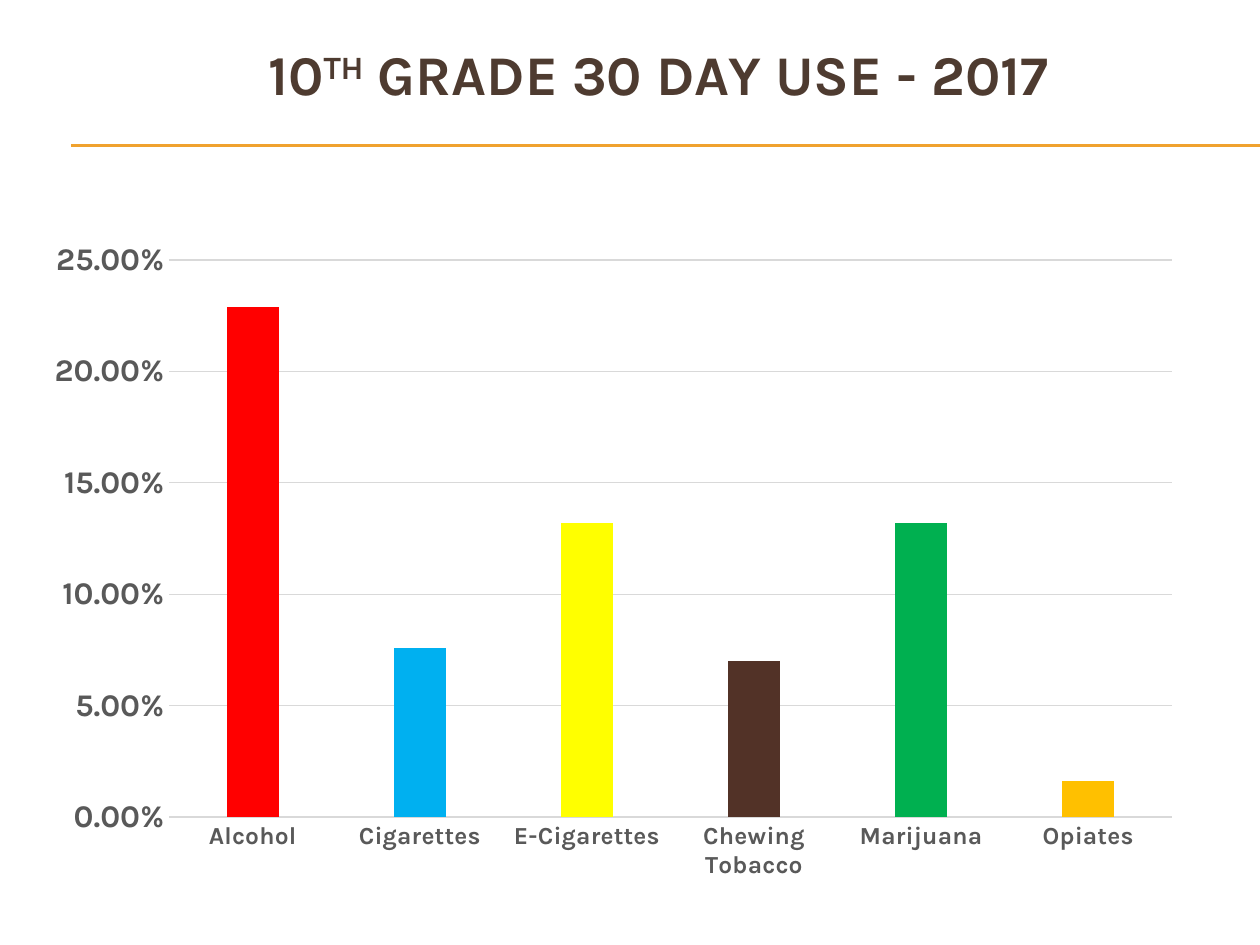
from lxml import etree
from pptx import Presentation
from pptx.chart.data import CategoryChartData
from pptx.dml.color import RGBColor as RGB
from pptx.enum.chart import XL_CHART_TYPE as Kind, XL_TICK_MARK as Tick
from pptx.enum.shapes import MSO_CONNECTOR as Link
from pptx.enum.text import MSO_ANCHOR as Anchor, MSO_AUTO_SIZE as Fit, PP_ALIGN as Align
from pptx.oxml import parse_xml
from pptx.oxml.ns import nsdecls, qn
from pptx.util import Emu, Pt

PX = 914400 / 126
FACE = "Karla"
HUES = {
    "title": "4E3B30", "rule": "F0A22E", "label": "595959", "grid": "D9D9D9",
    "Alcohol": "FF0000", "Cigarettes": "00B0F0", "E-Cigarettes": "FFFF00",
    "Chewing Tobacco": "523227", "Marijuana": "00B050", "Opiates": "FFC000",
}
RATES = {
    "Alcohol": 0.229, "Cigarettes": 0.076, "E-Cigarettes": 0.132,
    "Chewing Tobacco": 0.07, "Marijuana": 0.132, "Opiates": 0.016,
}


def box(*nums):
    return [Emu(round(n * PX)) for n in nums]


def style(font, size, hue):
    font.name = FACE
    font.size = Pt(size)
    font.bold = True
    font.color.rgb = RGB.from_string(HUES[hue])


deck = Presentation()
deck.slide_width, deck.slide_height = box(1260, 945)
slide = deck.slides.add_slide(deck.slide_layouts[5])

for y in (145, 146):
    rule = slide.shapes.add_connector(Link.STRAIGHT, *box(71, y, 1260, y))
    rule.line.color.rgb = RGB.from_string(HUES["rule"])
    rule.line.width = Pt(0.75)
    etree.SubElement(rule._element.spPr, qn("a:effectLst"))

title = slide.shapes.title
title.left, title.top, title.width, title.height = box(116, 42, 1086, 63)
frame = title.text_frame
frame.auto_size = Fit.NONE
frame.word_wrap = True
frame.vertical_anchor = Anchor.MIDDLE
para = frame.paragraphs[0]
para.alignment = Align.CENTER
for text, base in (("10", 0), ("TH", 30000), (" GRADE 30 DAY USE - 2017", 0)):
    run = para.add_run()
    run.text = text
    style(run.font, 32, "title")
    if base:
        run.font._element.set("baseline", str(base))

data = CategoryChartData(number_format="0.00%")
data.categories = list(RATES)
data.add_series("Series 1", list(RATES.values()))
chart = slide.shapes.add_chart(
    Kind.COLUMN_CLUSTERED, *box(54, 221, 1119, 683), data).chart
chart.has_legend = False
chart.has_title = False
chart.font.name = FACE
chart.font.size = Pt(10)

plot = chart.plots[0]
plot.gap_width = 219
plot.overlap = -27
plot.vary_by_categories = False
bars = plot.series[0]
bars.format.fill.solid()
bars.format.fill.fore_color.rgb = RGB.from_string(HUES["rule"])
for i, name in enumerate(RATES):
    fill = bars.points[i].format.fill
    fill.solid()
    fill.fore_color.rgb = RGB.from_string(HUES[name])

cats, vals = chart.category_axis, chart.value_axis
for axis, size in ((cats, 14), (vals, 18)):
    axis.major_tick_mark = axis.minor_tick_mark = Tick.NONE
    style(axis.tick_labels.font, size, "label")
vals.minimum_scale, vals.maximum_scale, vals.major_unit = 0, 0.25, 0.05
vals.tick_labels.number_format = "0.00%"
vals.tick_labels.number_format_is_linked = False
vals.format.line.fill.background()
vals.has_major_gridlines = True
for line in (cats.format.line, vals.major_gridlines.format.line):
    line.color.rgb = RGB.from_string(HUES["grid"])
    line.width = Pt(0.75)

area = chart._chartSpace.chart.plotArea
for old in area.findall(qn("c:layout")):
    area.remove(old)
spots = "".join(f'<c:{tag} val="{val}"/>' for tag, val in (
    ("layoutTarget", "inner"), ("xMode", "edge"), ("yMode", "edge"),
    ("x", 0.103), ("y", 0.057), ("w", 0.896), ("h", 0.816)))
area.insert(0, parse_xml(
    f'<c:layout {nsdecls("c")}><c:manualLayout>{spots}</c:manualLayout></c:layout>'))

deck.save("out.pptx")
